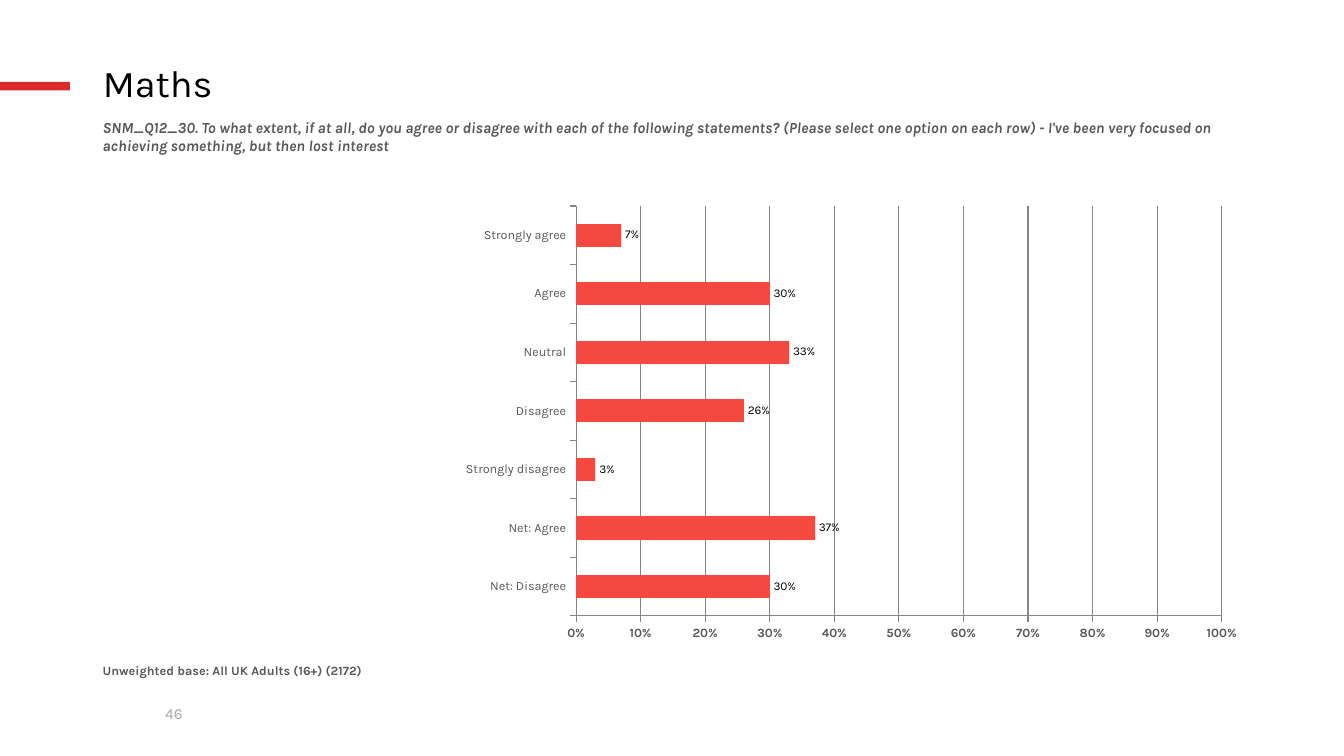
from dataclasses import dataclass

from lxml import etree
from pptx import Presentation
from pptx.chart.data import CategoryChartData
from pptx.dml.color import RGBColor
from pptx.enum import chart as ch, shapes, text
from pptx.oxml.ns import qn
from pptx.util import Pt

FONT = "Karla"
COLORS = {
    "accent": "DA2C2D",
    "bar": "F3493E",
    "black": "000000",
    "body": "595959",
    "number": "A6A6A6",
    "line": "868686",
}
LEFT, WIDTH = 66.24, 828
PLOT = {"x": 0.417, "y": 0.034, "w": 0.557, "h": 0.897}
ANSWERS = {
    "Strongly agree": 0.07,
    "Agree": 0.30,
    "Neutral": 0.33,
    "Disagree": 0.26,
    "Strongly disagree": 0.03,
    "Net: Agree": 0.37,
    "Net: Disagree": 0.30,
}


@dataclass
class Label:
    words: str
    left: float
    top: float
    width: float
    height: float
    size: float
    color: str
    bold: bool = False
    italic: bool = False


TITLE = Label("Maths", LEFT, 42.5, WIDTH, 36.7, 27, "black")
LABELS = [
    Label("46", 110.9, 499.7, 49, 20.9, 11, "number"),
    Label("SNM_Q12_30. To what extent, if at all, do you agree or disagree with each of the "
          "following statements? (Please select one option on each row) - I've been very "
          "focused on achieving something, but then lost interest",
          LEFT, 80.6, WIDTH, 47.5, 11, "body", bold=True, italic=True),
    Label("Unweighted base: All UK Adults (16+) (2172)",
          LEFT, 470.2, WIDTH, 31, 9, "body", bold=True),
]


def rgb(name: str) -> RGBColor:
    return RGBColor.from_string(COLORS[name])


def set_font(font, size: float, color: str, bold: bool = False, italic: bool = False) -> None:
    font.name, font.size = FONT, Pt(size)
    font.bold, font.italic = bold, italic
    font.color.rgb = rgb(color)


def write_label(sp, label: Label) -> None:
    """Place a text shape and fill it with the label's words."""
    sp.left, sp.top = Pt(label.left), Pt(label.top)
    sp.width, sp.height = Pt(label.width), Pt(label.height)
    tf = sp.text_frame
    tf.word_wrap = True
    p = tf.paragraphs[0]
    p.alignment = text.PP_ALIGN.LEFT
    r = p.add_run()
    r.text = label.words
    set_font(r.font, label.size, label.color, label.bold, label.italic)


def fix_plot_area(chart) -> None:
    """Pin the inner plot area to the fractions in PLOT."""
    area = chart._chartSpace.chart.plotArea
    for old in area.findall(qn("c:layout")):
        area.remove(old)
    layout = etree.Element(qn("c:layout"))
    manual = etree.SubElement(layout, qn("c:manualLayout"))
    settings = {"layoutTarget": "inner", "xMode": "edge", "yMode": "edge", **PLOT}
    for tag, value in settings.items():
        etree.SubElement(manual, qn(f"c:{tag}")).set("val", str(value))
    area.insert(0, layout)


def style_axis(axis, bold: bool) -> None:
    axis.major_tick_mark = ch.XL_TICK_MARK.OUTSIDE
    axis.minor_tick_mark = ch.XL_TICK_MARK.NONE
    axis.tick_label_position = ch.XL_TICK_LABEL_POSITION.LOW
    set_font(axis.tick_labels.font, 9, "body", bold)
    axis.format.line.color.rgb = rgb("line")
    axis.format.line.width = Pt(0.75)


def add_answer_chart(s) -> None:
    data = CategoryChartData(number_format="0%")
    # A bar chart stacks its categories from the bottom up
    data.categories = list(reversed(ANSWERS))
    data.add_series("Series 1", list(reversed(ANSWERS.values())))
    chart = s.shapes.add_chart(ch.XL_CHART_TYPE.BAR_CLUSTERED, Pt(LEFT), Pt(136.1),
                               Pt(WIDTH), Pt(326.2), data).chart
    chart.has_legend = False
    chart.has_title = False
    set_font(chart.font, 18, "black")
    fix_plot_area(chart)

    style_axis(chart.category_axis, bold=False)
    chart.category_axis.has_major_gridlines = False
    values = chart.value_axis
    style_axis(values, bold=True)
    values.minimum_scale, values.maximum_scale, values.major_unit = 0, 1, 0.1
    values.tick_labels.number_format = "0%"
    values.tick_labels.number_format_is_linked = False
    values.has_major_gridlines = True
    values.major_gridlines.format.line.color.rgb = rgb("line")
    values.major_gridlines.format.line.width = Pt(0.75)

    plot = chart.plots[0]
    plot.gap_width, plot.overlap = 150, -10
    plot.vary_by_categories = False
    series = plot.series[0]
    series.invert_if_negative = False
    series.format.fill.solid()
    series.format.fill.fore_color.rgb = rgb("bar")
    labels = series.data_labels
    labels.show_value = True
    labels.position = ch.XL_LABEL_POSITION.OUTSIDE_END
    labels.number_format = "0%"
    labels.number_format_is_linked = False
    set_font(labels.font, 8.5, "black")


def add_accent(s) -> None:
    sp = s.shapes.add_shape(shapes.MSO_SHAPE.RECTANGLE, Pt(0), Pt(58.6), Pt(50), Pt(6))
    sp.shadow.inherit = False
    sp.fill.solid()
    sp.fill.fore_color.rgb = rgb("accent")
    sp.line.fill.background()


def main() -> None:
    prs = Presentation()
    prs.slide_width, prs.slide_height = Pt(960), Pt(540)
    s = prs.slides.add_slide(prs.slide_layouts.get_by_name("Title Only"))
    add_accent(s)
    title = s.shapes.title
    write_label(title, TITLE)
    title.text_frame.vertical_anchor = text.MSO_ANCHOR.MIDDLE
    title.text_frame.paragraphs[0].line_spacing = 0.9
    for label in LABELS:
        write_label(s.shapes.add_textbox(0, 0, 0, 0), label)
    add_answer_chart(s)
    prs.save("out.pptx")


if __name__ == "__main__":
    main()
